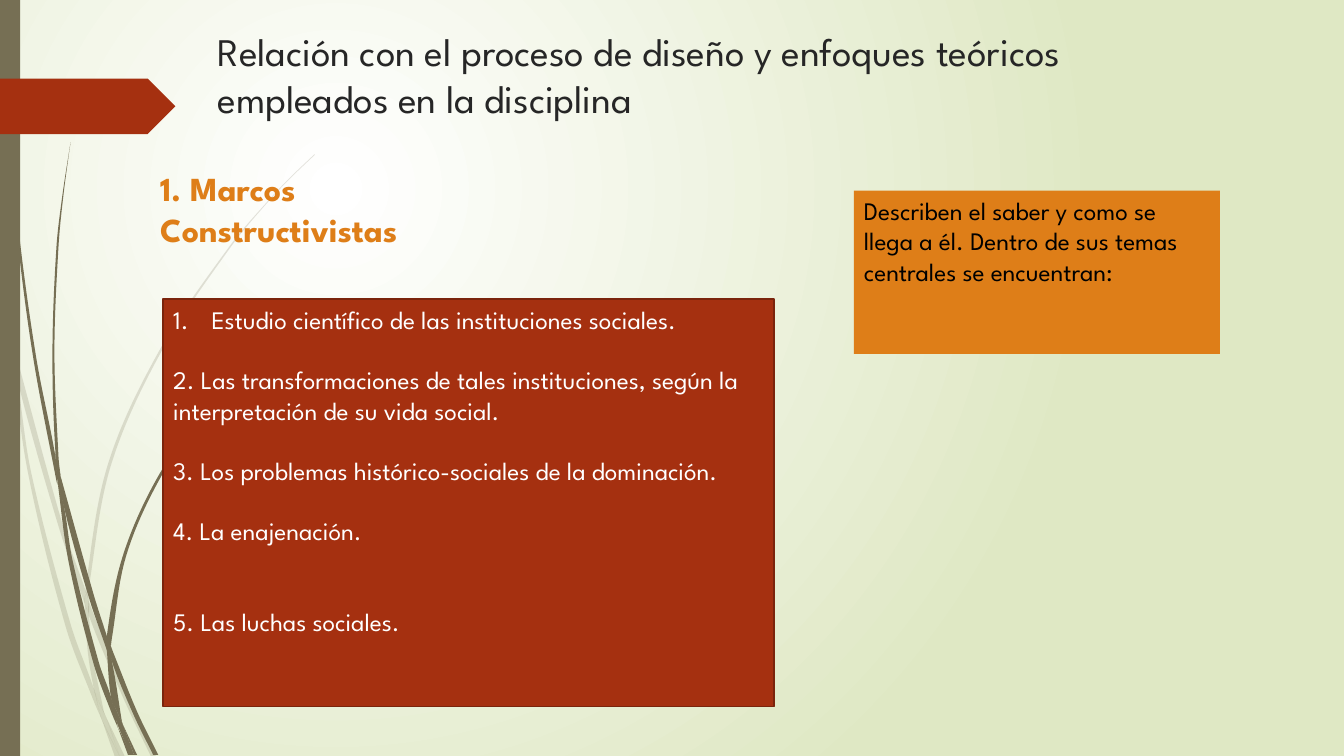
"""Build the slide on constructivist frameworks in the design discipline."""
import math
from dataclasses import dataclass
from typing import Optional

import lxml.etree
import pptx
import pptx.dml.color
import pptx.enum.shapes
import pptx.enum.text
import pptx.oxml.ns
import pptx.slide
import pptx.util

Inches = pptx.util.Inches
Pt = pptx.util.Pt
SHAPE = pptx.enum.shapes.MSO_SHAPE
qn = pptx.oxml.ns.qn
Point = tuple[float, float]


@dataclass(frozen=True)
class Theme:
    """Colours, font and type sizes of the slide."""
    font: str = "League Spartan"
    olive: str = "766F54"
    rust: str = "A53010"
    rust_edge: str = "7A240C"
    orange: str = "DE7E18"
    ink: str = "262626"
    black: str = "000000"
    white: str = "FFFFFF"
    leaf: str = "DFE8C4"
    title: float = 27.9
    heading: float = 24
    body: float = 18
    line_gap: float = 21.5


T = Theme()


@dataclass(frozen=True)
class Blade:
    """Piece of grass between two smooth edges, both listed downwards."""
    left: list[Point]
    right: list[Point]


@dataclass(frozen=True)
class Item:
    """Paragraph with the number of free lines above it."""
    text: str
    gap: int = 0
    numbered: bool = False


@dataclass(frozen=True)
class Box:
    """Rectangle with optional fill, outline and text."""
    at: tuple[float, float, float, float]
    items: tuple[Item, ...] = ()
    size: float = T.body
    color: str = T.black
    bold: bool = False
    fill: Optional[str] = None
    line: Optional[str] = None
    kind: SHAPE = SHAPE.RECTANGLE


PALE_BLADES = [
    Blade([(0, 2.99), (.1, 3.44), (.11, 3.5)], [(0, 2.82), (.09, 3.22), (.11, 3.5)]),
    Blade([(.14, 3.45), (.17, 3.76), (.58, 5.22), (.84, 5.99)],
          [(.14, 3.45), (.62, 5.2), (.85, 5.86)]),
    Blade([(.88, 5.96), (.88, 6.1), (1.23, 6.94), (1.5, 7.51)],
          [(.88, 5.96), (.92, 6.07), (1.27, 6.92), (1.55, 7.51)]),
    Blade([(1.05, 7.11), (1.19, 7.51)], [(1.05, 7.11), (1.24, 7.51)]),
    Blade([(.11, 3.5), (.28, 4.7), (.65, 6.21), (.92, 6.93), (1.01, 7.14)],
          [(.11, 3.5), (.17, 3.76), (.31, 4.69), (.7, 6.19), (.93, 6.83), (.99, 7.07)]),
    Blade([(.84, 5.99), (.87, 6.46), (.93, 6.83), (.96, 6.92), (1.05, 7.11)],
          [(.84, 5.99), (.88, 6.1), (.91, 6.46), (1.03, 7.06)]),
    Blade([(3.12, 1.53), (2.89, 1.75), (2.68, 1.97), (2.28, 2.44), (1.58, 3.48),
           (1.07, 4.61), (.85, 5.84), (.88, 5.96)],
          [(3.12, 1.54), (2.9, 1.75), (2.68, 1.98), (2.29, 2.45), (1.6, 3.49),
           (1.1, 4.62), (.88, 5.84), (.88, 5.96)]),
    Blade([(1.01, 7.14), (1.14, 7.51)], [(1.01, 7.14), (1.19, 7.51)]),
    Blade([(.85, 5.86), (.84, 5.99), (.88, 6.08)], [(.85, 5.86), (.88, 5.96), (.88, 6.1)]),
    Blade([(.93, 6.83), (.99, 7.07), (1.01, 7.14), (1.19, 7.51)],
          [(.93, 6.83), (.96, 6.92), (1.05, 7.11), (1.19, 7.51)]),
]
DARK_BLADES = [
    Blade([(.03, 0), (.07, 1.1), (.17, 2.33), (.33, 3.55), (.56, 4.77), (.57, 4.81)],
          [(.04, 0), (.08, 1.09), (.19, 2.32), (.36, 3.55), (.55, 4.53), (.57, 4.81)]),
    Blade([(.6, 4.72), (.64, 5.05), (.88, 5.92), (1.06, 6.45)],
          [(.6, 4.72), (.93, 5.9), (1.06, 6.31)]),
    Blade([(1.1, 6.41), (1.11, 6.56), (1.32, 7.08), (1.52, 7.49)],
          [(1.1, 6.41), (1.13, 6.49), (1.36, 7.06), (1.57, 7.49)]),
    Blade([(.57, 4.77), (.68, 5.57), (.93, 6.59), (1.11, 7.08), (1.17, 7.22)],
          [(.57, 4.77), (.64, 5.05), (.72, 5.56), (.98, 6.57), (1.1, 6.91), (1.16, 7.17)]),
    Blade([(.7, 1.41), (.62, 1.93), (.56, 2.45), (.52, 3.49), (.55, 4.49), (.6, 4.72)],
          [(.7, 1.41), (.63, 1.93), (.58, 2.45), (.54, 3.49), (.58, 4.53), (.6, 4.72)]),
    Blade([(1.22, 7.19), (1.33, 7.49)], [(1.22, 7.19), (1.36, 7.49)]),
    Blade([(.55, 4.49), (.55, 4.53), (.57, 4.77), (.64, 5.05)],
          [(.55, 4.49), (.6, 4.72), (.64, 5.05)]),
    Blade([(2.6, 3.44), (2.31, 3.73), (2.04, 4.05), (1.56, 4.74), (1.22, 5.51),
           (1.06, 6.31), (1.1, 6.41)],
          [(2.61, 3.44), (2.31, 3.74), (2.05, 4.06), (1.58, 4.76), (1.25, 5.52),
           (1.11, 6.33), (1.1, 6.41)]),
    Blade([(1.17, 7.22), (1.27, 7.49)], [(1.17, 7.22), (1.31, 7.49)]),
    Blade([(1.06, 6.45), (1.1, 6.91), (1.16, 7.06), (1.22, 7.19)],
          [(1.06, 6.45), (1.11, 6.56), (1.21, 7.16)]),
    Blade([(1.06, 6.31), (1.06, 6.45), (1.11, 6.56)], [(1.06, 6.31), (1.1, 6.41), (1.11, 6.56)]),
    Blade([(1.1, 6.91), (1.16, 7.17), (1.3, 7.49)],
          [(1.1, 6.91), (1.16, 7.06), (1.22, 7.19), (1.33, 7.49)]),
]
BOXES = [
    Box((0, 0, .2, 7.5), fill=T.olive),
    Box((0, .78, 1.74, .55), fill=T.rust, kind=SHAPE.PENTAGON),
    Box((1.49, 1.62, 3.78, .91), (Item("1. Marcos Constructivistas"),),
        T.heading, T.orange, bold=True),
    Box((8.47, 1.89, 3.63, 1.62),
        (Item("Describen el saber y como se llega a él. "
              "Dentro de sus temas centrales se encuentran:"),), fill=T.orange),
    Box((1.62, 2.97, 6.06, 4.04), (
        Item("Estudio científico de las instituciones sociales.", numbered=True),
        Item("2. Las transformaciones de tales instituciones, "
             "según la interpretación de su vida social.", 1),
        Item("3. Los problemas histórico-sociales de la dominación.", 1),
        Item("4. La enajenación.", 1),
        Item("5. Las luchas sociales.", 2),
    ), color=T.white, fill=T.rust, line=T.rust_edge),
    Box((2.06, .22, 9.74, 1.4),
        (Item("Relación con el proceso de diseño y enfoques teóricos "
              "empleados en la disciplina"),), T.title, T.ink),
]


def rgb(color: str) -> pptx.dml.color.RGBColor:
    """Turn a hex string into a colour."""
    return pptx.dml.color.RGBColor.from_string(color)


def smooth(pts: list[Point]) -> list[Point]:
    """Return the Bézier points of a smooth curve, three per segment."""
    ends, curve = [pts[0], *pts, pts[-1]], []
    for a, b, c, d in zip(ends, ends[1:], ends[2:], ends[3:]):
        reach = math.dist(b, c) / 3
        k, m = reach / math.dist(a, c), reach / math.dist(b, d)
        curve += [(b[0] + k * (c[0] - a[0]), b[1] + k * (c[1] - a[1])),
                  (c[0] - m * (d[0] - b[0]), c[1] - m * (d[1] - b[1])), c]
    return curve


def draw_background(s: pptx.slide.Slide) -> None:
    """Fill the background with a radial gradient."""
    fill = s.background.fill
    fill.gradient()
    for stop, color, position in zip(fill.gradient_stops, (T.white, T.leaf), (0, 1)):
        stop.color.rgb, stop.position = rgb(color), position
    grad = s.element.find(".//" + qn("a:gradFill"))
    grad.remove(grad.find(qn("a:lin")))
    radial = lxml.etree.SubElement(grad, qn("a:path"), path="circle")
    lxml.etree.SubElement(radial, qn("a:fillToRect"), l="50000", t="50000", r="100000", b="100000")


def draw_blade(s: pptx.slide.Slide, blade: Blade, alpha: int) -> None:
    """Draw one piece of grass with curved edges."""
    low = blade.right[-1]
    outline = [(Inches(x), Inches(y)) for x, y in
               [blade.left[0], *smooth(blade.left), low, low, low, *smooth(blade.right[::-1])]]
    builder = s.shapes.build_freeform(*outline[0])
    builder.add_line_segments(outline[1:], close=True)
    sp = builder.convert_to_shape()
    sp.shadow.inherit = False
    sp.line.fill.background()
    sp.fill.solid()
    sp.fill.fore_color.rgb = rgb(T.olive)
    lines = sp.element.findall(".//" + qn("a:lnTo"))
    for trio in zip(lines[::3], lines[1::3], lines[2::3]):
        curve = lxml.etree.Element(qn("a:cubicBezTo"))
        trio[0].addprevious(curve)
        for line in trio:
            curve.append(line[0])
            line.getparent().remove(line)
    if alpha < 100:
        color = sp.element.spPr.find(".//" + qn("a:srgbClr"))
        lxml.etree.SubElement(color, qn("a:alpha"), val=str(alpha * 1000))


def draw_box(s: pptx.slide.Slide, box: Box) -> None:
    """Draw one box and its paragraphs."""
    at = [Inches(v) for v in box.at]
    sp = s.shapes.add_shape(box.kind, *at) if box.fill else s.shapes.add_textbox(*at)
    if box.fill:
        sp.shadow.inherit = False
        sp.fill.solid()
        sp.fill.fore_color.rgb = rgb(box.fill)
        sp.line.fill.background()
    if box.line:
        sp.line.color.rgb, sp.line.width = rgb(box.line), Pt(1.25)
    tf = sp.text_frame
    tf.word_wrap, tf.vertical_anchor = True, pptx.enum.text.MSO_ANCHOR.TOP
    for i, item in enumerate(box.items):
        p = tf.add_paragraph() if i else tf.paragraphs[0]
        p.text, p.alignment = item.text, pptx.enum.text.PP_ALIGN.LEFT
        p.space_before = Pt(item.gap * T.line_gap)
        p.font.name, p.font.size, p.font.bold = T.font, Pt(box.size), box.bold
        p.font.color.rgb = rgb(box.color)
        if item.numbered:
            pPr = p._p.get_or_add_pPr()
            pPr.set("marL", str(Inches(.38)))
            pPr.set("indent", str(-Inches(.38)))
            number = lxml.etree.Element(qn("a:buAutoNum"), type="arabicPeriod")
            pPr.find(qn("a:defRPr")).addprevious(number)


def main() -> None:
    """Build and save the presentation."""
    prs = pptx.Presentation()
    prs.slide_width, prs.slide_height = Inches(13.33), Inches(7.5)
    s = prs.slides.add_slide(prs.slide_layouts[6])
    draw_background(s)
    for blades, alpha in ((PALE_BLADES, 20), (DARK_BLADES, 100)):
        for blade in blades:
            draw_blade(s, blade, alpha)
    for box in BOXES:
        draw_box(s, box)
    prs.save("out.pptx")


if __name__ == "__main__":
    main()
